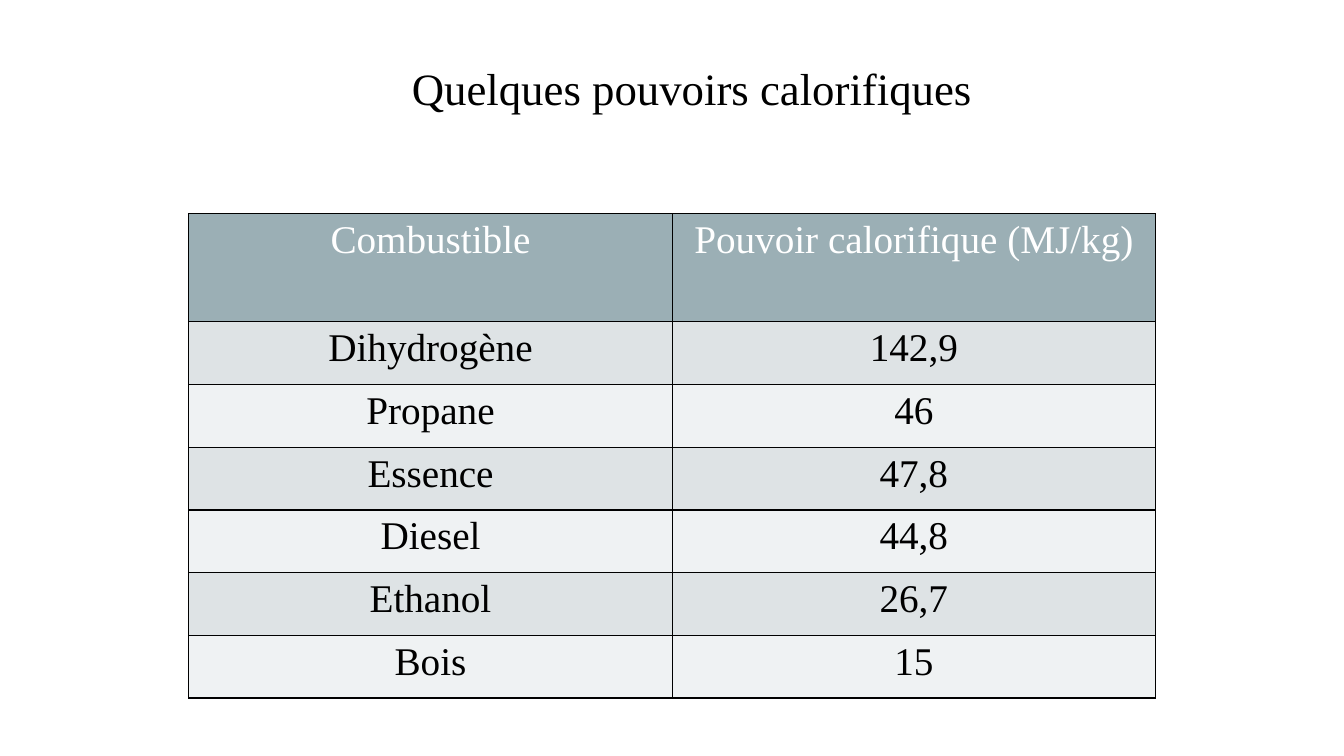
from lxml import etree
from pptx import Presentation
from pptx.dml.color import RGBColor
from pptx.enum.text import MSO_ANCHOR, PP_ALIGN
from pptx.oxml.ns import qn
from pptx.util import Cm, Pt

CENTER = PP_ALIGN.CENTER
TOP = MSO_ANCHOR.TOP
MIDDLE = MSO_ANCHOR.MIDDLE
BLACK = RGBColor(0x00, 0x00, 0x00)
WHITE = RGBColor(0xFF, 0xFF, 0xFF)
HEADER_FILL = RGBColor(0x9B, 0xAF, 0xB5)
DARK_BAND = RGBColor(0xDE, 0xE3, 0xE5)
LIGHT_BAND = RGBColor(0xEF, 0xF2, 0xF3)
FONT = "Times New Roman"

HEATING_VALUES = [
    ("Combustible", "Pouvoir calorifique (MJ/kg)"),
    ("Dihydrogène", "142,9"),
    ("Propane", "46"),
    ("Essence", "47,8"),
    ("Diesel", "44,8"),
    ("Ethanol", "26,7"),
    ("Bois", "15"),
]


def format_text(frame, size, color):
    paragraph = frame.paragraphs[0]
    paragraph.alignment = CENTER
    font = paragraph.runs[0].font
    font.name = FONT
    font.size = Pt(size)
    font.bold = False
    font.color.rgb = color


def add_borders(cell):
    properties = cell._tc.get_or_add_tcPr()
    for side in ("a:lnL", "a:lnR", "a:lnT", "a:lnB"):
        border = etree.SubElement(properties, qn(side), w=str(Pt(1)))
        fill = etree.SubElement(border, qn("a:solidFill"))
        etree.SubElement(fill, qn("a:srgbClr"), val=str(BLACK))


prs = Presentation()
prs.slide_width = Cm(33.87)
prs.slide_height = Cm(19.05)
slide = prs.slides.add_slide(prs.slide_layouts[5])

title = slide.shapes.title
title.left, title.top, title.width, title.height = Cm(10.06), Cm(1.4), Cm(14.76), Cm(1.63)
title.text_frame.text = "Quelques pouvoirs calorifiques"
title.text_frame.word_wrap = False
title.text_frame.vertical_anchor = MIDDLE
format_text(title.text_frame, 32, BLACK)

fuels = slide.shapes.add_table(
    len(HEATING_VALUES), 2, Cm(4.76), Cm(5.39), Cm(24.36), Cm(12.2)
).table

for row_index, values in enumerate(HEATING_VALUES):
    is_header = row_index == 0
    fuels.rows[row_index].height = Cm(2.72 if is_header else 1.58)
    band = DARK_BAND if row_index % 2 else LIGHT_BAND
    for column_index, value in enumerate(values):
        cell = fuels.cell(row_index, column_index)
        cell.text_frame.text = value
        cell.vertical_anchor = TOP
        format_text(cell.text_frame, 28, WHITE if is_header else BLACK)
        add_borders(cell)
        cell.fill.solid()
        cell.fill.fore_color.rgb = HEADER_FILL if is_header else band

prs.save("out.pptx")
